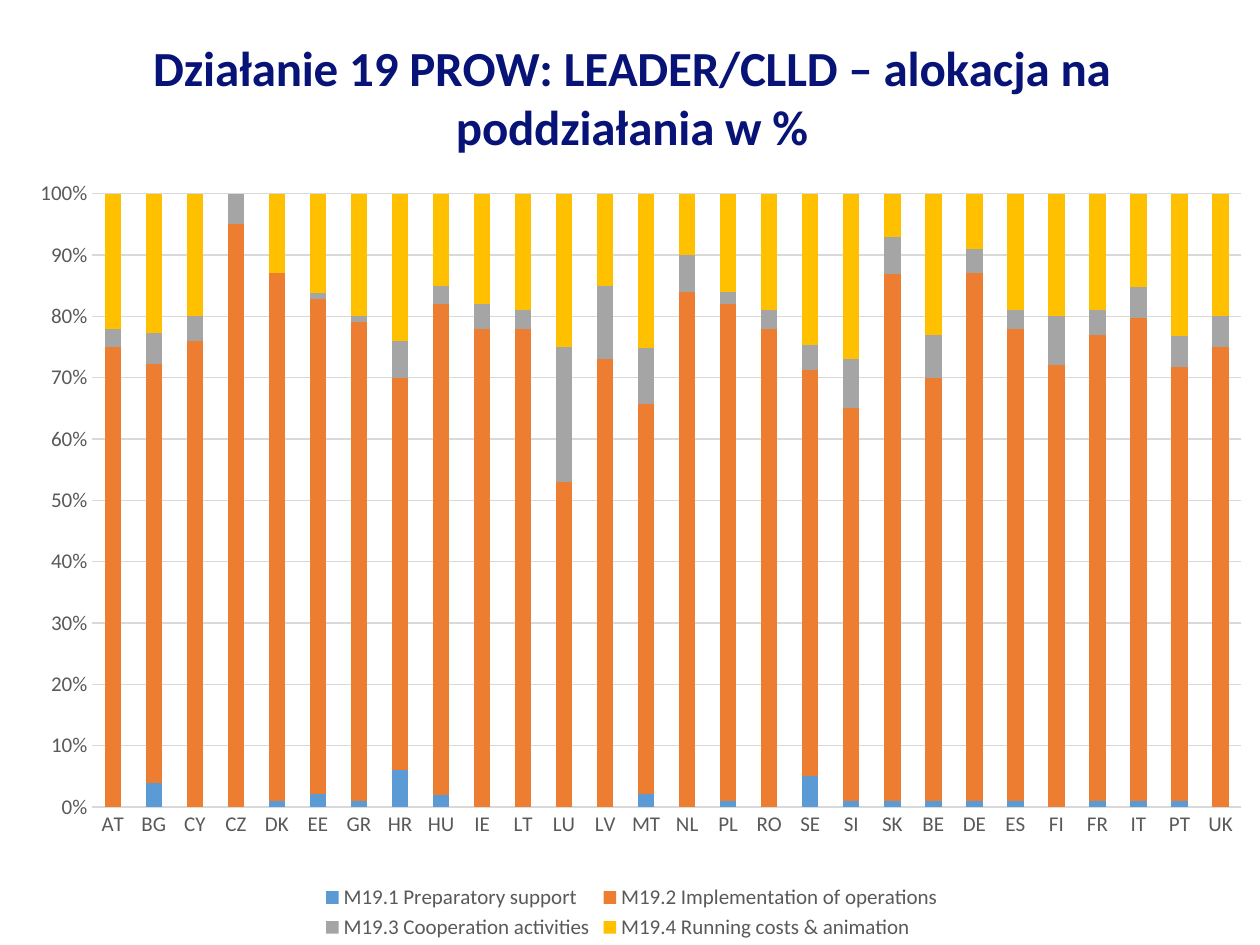
from lxml import etree
from pptx import Presentation
from pptx.chart.data import CategoryChartData
from pptx.dml.color import RGBColor
from pptx.enum.chart import XL_CHART_TYPE as ChartType
from pptx.enum.chart import XL_LEGEND_POSITION as LegendPosition
from pptx.enum.chart import XL_TICK_MARK as TickMark
from pptx.oxml.ns import qn
from pptx.util import Inches, Pt

NAVY = RGBColor(0x07, 0x13, 0x76)
DARK_GREY = RGBColor(0x59, 0x59, 0x59)
LIGHT_GREY = RGBColor(0xD9, 0xD9, 0xD9)
BLUE = RGBColor(0x5B, 0x9B, 0xD5)
ORANGE = RGBColor(0xED, 0x7D, 0x31)
GREY = RGBColor(0xA5, 0xA5, 0xA5)
YELLOW = RGBColor(0xFF, 0xC0, 0x00)

COUNTRIES = ("AT BG CY CZ DK EE GR HR HU IE LT LU LV MT "
             "NL PL RO SE SI SK BE DE ES FI FR IT PT UK").split()
SUBMEASURES = [
    ("M19.1 Preparatory support", BLUE,
     [0, 4, None, None, 1, 2, 1, 6, 2, 0, 0, 0, 0, 2,
      0, 1, 0, 5, 1, 1, 1, 1, 1, 0, 1, 1, 1, 0]),
    ("M19.2 Implementation of operations", ORANGE,
     [75, 69, 76, 95, 86, 80, 78, 64, 80, 78, 78, 53, 73, 63,
      84, 81, 78, 67, 64, 85, 69, 86, 77, 72, 76, 78, 70, 75]),
    ("M19.3 Cooperation activities", GREY,
     [3, 5, 4, 5, 0, 1, 1, 6, 3, 4, 3, 22, 12, 9,
      6, 2, 3, 4, 8, 6, 7, 4, 3, 8, 4, 5, 5, 5]),
    ("M19.4 Running costs & animation", YELLOW,
     [22, 23, 20, None, 13, 16, 20, 24, 15, 18, 19, 25, 15, 25,
      10, 16, 19, 25, 27, 7, 23, 9, 19, 20, 19, 15, 23, 20]),
]


def style_font(font, size, color):
    font.name = "Calibri"
    font.size = Pt(size)
    font.color.rgb = color


deck = Presentation()
deck.slide_width, deck.slide_height = Inches(10), Inches(7.5)
page = deck.slides.add_slide(deck.slide_layouts[6])

# Stacked chart of allocation shares
data = CategoryChartData(number_format="#,##0")
data.categories = COUNTRIES
for name, color, values in SUBMEASURES:
    data.add_series(name, values)
chart = page.shapes.add_chart(
    ChartType.COLUMN_STACKED_100,
    Inches(0.16), Inches(0), Inches(9.71), Inches(7.5), data).chart
chart.font.name = "Calibri"
chart.font.size = Pt(10)

plot = chart.plots[0]
plot.gap_width = 150
plot.overlap = 100
plot.vary_by_categories = False
for series, (name, color, values) in zip(plot.series, SUBMEASURES):
    series.format.fill.solid()
    series.format.fill.fore_color.rgb = color
    series.invert_if_negative = False

# Chart title
chart.has_title = True
chart.chart_title.include_in_layout = False
para = chart.chart_title.text_frame.paragraphs[0]
span = para.add_run()
span.text = "Działanie 19 PROW: LEADER/CLLD – alokacja na poddziałania w %"
style_font(span.font, 28, NAVY)
span.font.bold = True

# Axes and gridlines
for axis in (chart.category_axis, chart.value_axis):
    axis.major_tick_mark = axis.minor_tick_mark = TickMark.NONE
    style_font(axis.tick_labels.font, 12, DARK_GREY)
chart.value_axis.format.line.fill.background()
chart.value_axis.has_major_gridlines = True
chart.value_axis.tick_labels.number_format = "0%"
chart.value_axis.tick_labels.number_format_is_linked = False
for line in (chart.category_axis.format.line,
             chart.value_axis.major_gridlines.format.line):
    line.color.rgb = LIGHT_GREY
    line.width = Pt(0.75)

# Legend
chart.has_legend = True
chart.legend.position = LegendPosition.BOTTOM
chart.legend.include_in_layout = False
style_font(chart.legend.font, 12, DARK_GREY)

# Fixed inner plot area, as fractions of the chart
plot_area = chart.element.find(".//" + qn("c:plotArea"))
layout = plot_area.find(qn("c:layout"))
if layout is None:
    layout = etree.Element(qn("c:layout"))
    plot_area.insert(0, layout)
manual = etree.SubElement(layout, qn("c:manualLayout"))
for tag, value in (("layoutTarget", "inner"), ("xMode", "edge"),
                   ("yMode", "edge"), ("x", "0.059"), ("y", "0.205"),
                   ("w", "0.939"), ("h", "0.649")):
    etree.SubElement(manual, qn("c:" + tag)).set("val", value)

deck.save("out.pptx")
